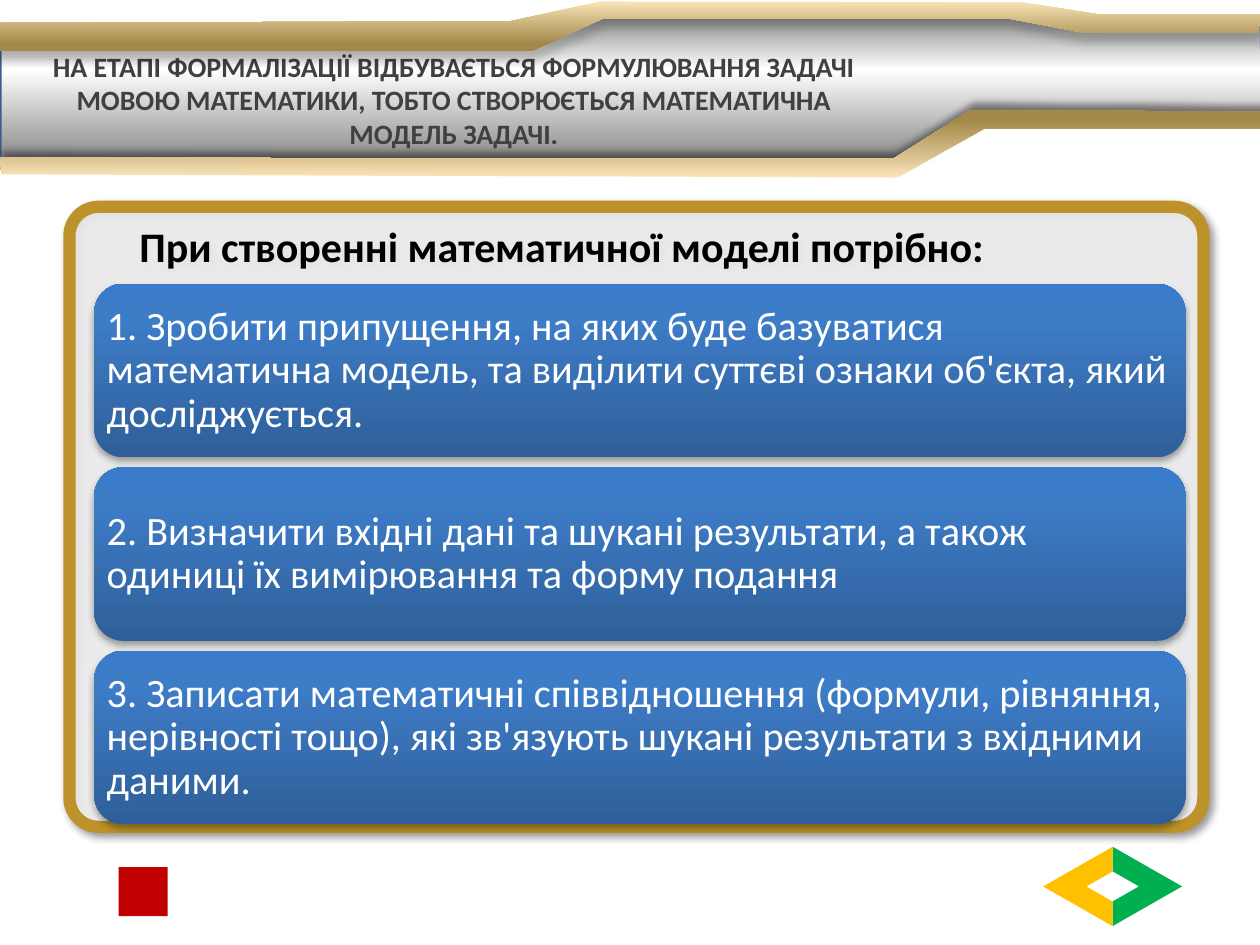
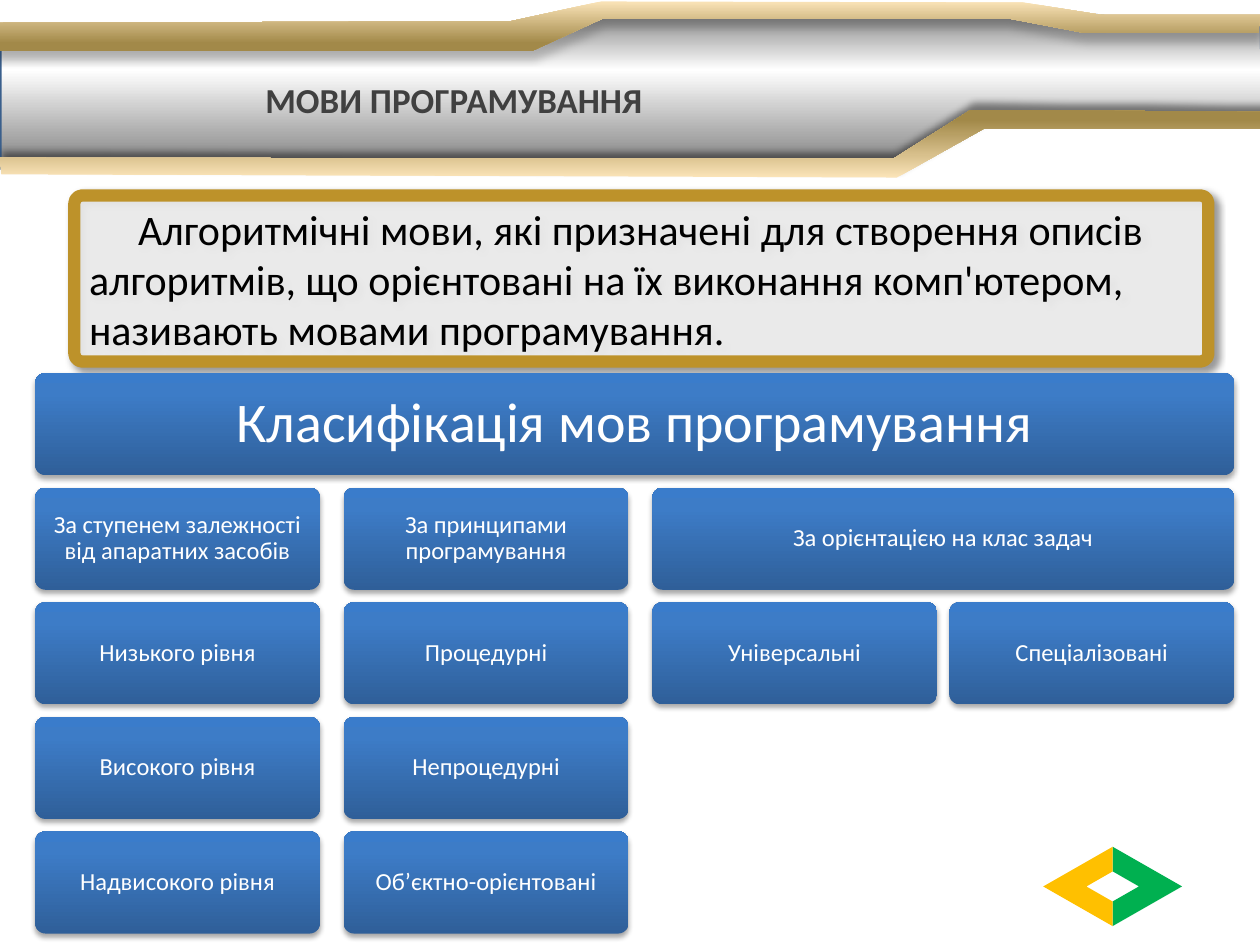
from collections import namedtuple

from lxml.etree import SubElement
from pptx import Presentation
from pptx.dml.color import RGBColor
from pptx.enum.shapes import MSO_SHAPE
from pptx.enum.text import MSO_ANCHOR, PP_ALIGN
from pptx.oxml.ns import qn
from pptx.util import Cm, Pt

# Lengths in a Box are centimetres
Box = namedtuple("Box", "left top width height")
# Alpha in percent, blur and distance in points, direction in degrees
Shadow = namedtuple("Shadow", "alpha blur distance direction")


class Theme:
    font = "Calibri"
    # Colours
    white, black, grey = "FFFFFF", "000000", "404040"
    gold_line, steel_line = "BD922A", "3A5F8C"
    green, amber, red = "00B050", "FFC000", "C00000"
    # Gradients: stops as percent and colour
    silver = [(0, "7F7F7F"), (38, "FFFFFF"), (100, "7F7F7F")]
    gold = [(0, "FAE3B7"), (85, "A28949")]
    blue = [(0, "2F5F99"), (80, "3D7CC7"), (100, "3A7CCB")]
    downward, upward = 270, 90
    # Shadows
    panel_shadow = Shadow(40, 4, 3, 45)
    top_band_shadow = Shadow(19, 4, 5, 90)
    bottom_band_shadow = Shadow(43, 4, 4, 280)
    block_shadow = Shadow(35, 3.1, 1.8, 90)
    # Type sizes
    long_title, short_title, lead, card, heading, leaf = 16, 20, 24, 23, 32, 14


SLIDE = Box(0, 0, 25.4, 19.05)
HEADER = Box(0, 0, 25.4, 3.58)
FOOTER = Box(0, 17.07, 25.4, 1.6)

BAND_BODY = [(0, 0.81), (10.29, 0.81), (12.19, 0.2), (20.5, 0.2), (22.28, 0.33),
             (25.43, 0.33), (25.45, 2.36), (19.51, 2.31), (17.96, 3.38), (0, 3.38)]
TOP_BAND = [(-0.08, 1.02), (10.74, 1.02), (12.14, 0.38), (20.37, 0.38),
            (21.84, 0.66), (25.37, 0.66), (25.4, 0.3), (22.2, 0.3),
            (20.62, 0.05), (12.12, 0.03), (10.29, 0.43), (-0.08, 0.46)]
BOTTOM_BAND = [(0, 3.18), (18.01, 3.2), (19.58, 2.21), (25.58, 2.26),
               (25.48, 2.59), (19.84, 2.59), (18.08, 3.58), (0.03, 3.51)]

STEPS = [
    "1. Зробити припущення, на яких буде базуватися математична модель, "
    "та виділити суттєві ознаки об'єкта, який досліджується.",
    "2. Визначити вхідні дані та шукані результати, а також одиниці "
    "їх вимірювання та форму подання",
    "3. Записати математичні співвідношення (формули, рівняння, нерівності "
    "тощо), які зв'язують шукані результати з вхідними даними.",
]

# Each branch: heading, then rows of leaves
BRANCHES = [
    ("За ступенем залежності від апаратних засобів",
     [["Низького рівня"], ["Високого рівня"], ["Надвисокого рівня"]]),
    ("За принципами програмування",
     [["Процедурні"], ["Непроцедурні"], ["Об’єктно-орієнтовані"]]),
    ("За орієнтацією на клас задач",
     [["Універсальні", "Спеціалізовані"]]),
]


def apply(target, values):
    for name, value in values.items():
        setattr(target, name, value)


def inside(box, left, top, width, height):
    return Box(box.left + left, box.top + top, width, height)


def lengths(box):
    return [Cm(value) for value in box]


def paint(shape, color):
    shape.fill.solid()
    shape.fill.fore_color.rgb = RGBColor.from_string(color)


def paint_gradient(shape, stops, angle):
    shape.fill.gradient()
    shape.fill.gradient_angle = angle
    stop_list = shape._element.spPr.find(qn("a:gradFill")).find(qn("a:gsLst"))
    stop_list.clear()
    for percent, color in stops:
        stop = SubElement(stop_list, qn("a:gs"), pos=str(percent * 1000))
        SubElement(stop, qn("a:srgbClr"), val=color)


def outline(shape, color=None, width=0):
    if color is None:
        shape.line.fill.background()
        return
    shape.line.color.rgb = RGBColor.from_string(color)
    shape.line.width = Pt(width)


def cast(shape, shadow=None):
    shape.shadow.inherit = False
    if shadow is None:
        return
    effects = shape._element.spPr.find(qn("a:effectLst"))
    outer = SubElement(effects, qn("a:outerShdw"), blurRad=str(Pt(shadow.blur)),
                       dist=str(Pt(shadow.distance)),
                       dir=str(shadow.direction * 60000), rotWithShape="0")
    color = SubElement(outer, qn("a:srgbClr"), val=Theme.black)
    SubElement(color, qn("a:alpha"), val=str(shadow.alpha * 1000))


def write(shape, text, size, color, bold=False, align=PP_ALIGN.LEFT,
          spacing=None, indent=None, **frame_format):
    frame = shape.text_frame
    apply(frame, {"word_wrap": True, "vertical_anchor": MSO_ANCHOR.MIDDLE,
                  **frame_format})
    paragraph = frame.paragraphs[0]
    paragraph.text = text
    if indent:
        properties = paragraph._p.get_or_add_pPr()
        properties.set("marL", "0")
        properties.set("indent", str(Cm(indent)))
    apply(paragraph, {"alignment": align, "line_spacing": spacing})
    font = paragraph.runs[0].font
    apply(font, {"name": Theme.font, "size": Pt(size), "bold": bold})
    font.color.rgb = RGBColor.from_string(color)


def margins(side):
    return {f"margin_{edge}": Cm(side)
            for edge in ("left", "top", "right", "bottom")}


def add_outline(slide, box, points, stops, angle):
    corners = [(Cm(box.left + x), Cm(box.top + y)) for x, y in points]
    builder = slide.shapes.build_freeform(*corners[0])
    builder.add_line_segments(corners[1:], close=True)
    shape = builder.convert_to_shape()
    paint_gradient(shape, stops, angle)
    outline(shape)
    return shape


def add_plain(slide, kind, box, color):
    shape = slide.shapes.add_shape(kind, *lengths(box))
    paint(shape, color)
    outline(shape)
    cast(shape)
    return shape


def add_block(slide, box, text, size, inset, corner=0.167, align=PP_ALIGN.CENTER):
    block = slide.shapes.add_shape(MSO_SHAPE.ROUNDED_RECTANGLE, *lengths(box))
    block.adjustments[0] = corner
    paint_gradient(block, Theme.blue, Theme.upward)
    outline(block)
    cast(block, Theme.block_shadow)
    write(block, text, size, Theme.white, align=align, spacing=0.9,
          **margins(inset))


def add_header(slide, box, title, size):
    # Silver band with the title
    body = add_outline(slide, box, BAND_BODY, Theme.silver, Theme.downward)
    outline(body, Theme.steel_line, 2)
    cast(body)
    heading = slide.shapes.add_textbox(*lengths(inside(box, 0.41, 0.81, 17.48, 2.39)))
    write(heading, title, size, Theme.grey, bold=True, align=PP_ALIGN.CENTER)
    # Gold edges
    for points, angle, shadow in (
            (TOP_BAND, Theme.downward, Theme.top_band_shadow),
            (BOTTOM_BAND, Theme.upward, Theme.bottom_band_shadow)):
        cast(add_outline(slide, box, points, Theme.gold, angle), shadow)


def add_footer(slide, box, with_square):
    # Pair of arrows pointing outwards
    arrow_width = 1.4
    for column, color, turn in ((1, Theme.green, 0), (0, Theme.amber, 180)):
        place = inside(box, 21.03 + column * arrow_width, 0, arrow_width, box.height)
        arrow = add_plain(slide, MSO_SHAPE.NOTCHED_RIGHT_ARROW, place, color)
        arrow.adjustments[0] = 0.379
        arrow.adjustments[1] = 1.25
        arrow.rotation = turn
    if with_square:
        add_plain(slide, MSO_SHAPE.RECTANGLE, inside(box, 2.39, 0.41, 0.99, 0.99),
                  Theme.red)


def add_panel(slide, box, text, bold=False):
    panel = slide.shapes.add_shape(MSO_SHAPE.ROUNDED_RECTANGLE, *lengths(box))
    panel.adjustments[0] = 0.047
    paint(panel, Theme.white)
    color = panel._element.spPr.find(qn("a:solidFill")).find(qn("a:srgbClr"))
    SubElement(color, qn("a:alpha"), val="72000")
    outline(panel, Theme.gold_line, 7)
    cast(panel, Theme.panel_shadow)
    write(panel, text, Theme.lead, Theme.black, bold=bold, indent=0.99,
          vertical_anchor=MSO_ANCHOR.TOP, margin_top=Cm(0.11), margin_bottom=0)


def add_steps(slide, box, steps, gap=0.2):
    height = (box.height - gap * (len(steps) - 1)) / len(steps)
    for row, step in enumerate(steps):
        place = inside(box, 0, row * (height + gap), box.width, height)
        add_block(slide, place, step, Theme.card, 0.08, align=PP_ALIGN.LEFT)


def add_classification(slide, box, title, branches):
    leaf_width, height, row_step = 5.74, 2.06, 2.31
    branch_gap, leaf_gap, corner = 0.48, 0.25, 0.1
    add_block(slide, inside(box, 0, 0, box.width, height), title,
              Theme.heading, 0.27, corner)
    left = 0
    for heading, rows in branches:
        # Branch heading spans its widest row
        columns = max(len(row) for row in rows)
        width = columns * (leaf_width + leaf_gap) - leaf_gap
        add_block(slide, inside(box, left, row_step, width, height), heading,
                  Theme.leaf, 0.1, corner)
        for level, row in enumerate(rows, start=2):
            for column, leaf in enumerate(row):
                place = inside(box, left + column * (leaf_width + leaf_gap),
                               level * row_step, leaf_width, height)
                add_block(slide, place, leaf, Theme.leaf, 0.1, corner)
        left += width + branch_gap


def add_base(deck, title, size, panel_box, panel_text, bold=False, with_square=False):
    slide = deck.slides.add_slide(deck.slide_layouts[6])
    add_header(slide, HEADER, title, size)
    add_panel(slide, panel_box, panel_text, bold)
    add_footer(slide, FOOTER, with_square)
    return slide


def main():
    deck = Presentation()
    apply(deck, {"slide_width": Cm(SLIDE.width), "slide_height": Cm(SLIDE.height)})

    # Building a mathematical model
    modelling = add_base(
        deck,
        "НА ЕТАПІ ФОРМАЛІЗАЦІЇ ВІДБУВАЄТЬСЯ ФОРМУЛЮВАННЯ ЗАДАЧІ МОВОЮ "
        "МАТЕМАТИКИ, ТОБТО СТВОРЮЄТЬСЯ МАТЕМАТИЧНА МОДЕЛЬ ЗАДАЧІ.",
        Theme.long_title, Box(1.4, 4.17, 22.86, 12.5),
        "При створенні математичної моделі потрібно:", bold=True, with_square=True)
    add_steps(modelling, Box(1.9, 5.72, 22, 10.9), STEPS)

    # Programming languages and their classes
    languages = add_base(
        deck, "МОВИ ПРОГРАМУВАННЯ", Theme.short_title, Box(1.5, 3.94, 22.86, 3.35),
        "Алгоритмічні мови, які призначені для створення описів алгоритмів, що "
        "орієнтовані на їх виконання комп'ютером, називають мовами програмування.")
    add_classification(languages, Box(0.71, 7.52, 24.17, 11.3),
                       "Класифікація мов програмування", BRANCHES)

    deck.save("out.pptx")


if __name__ == "__main__":
    main()
